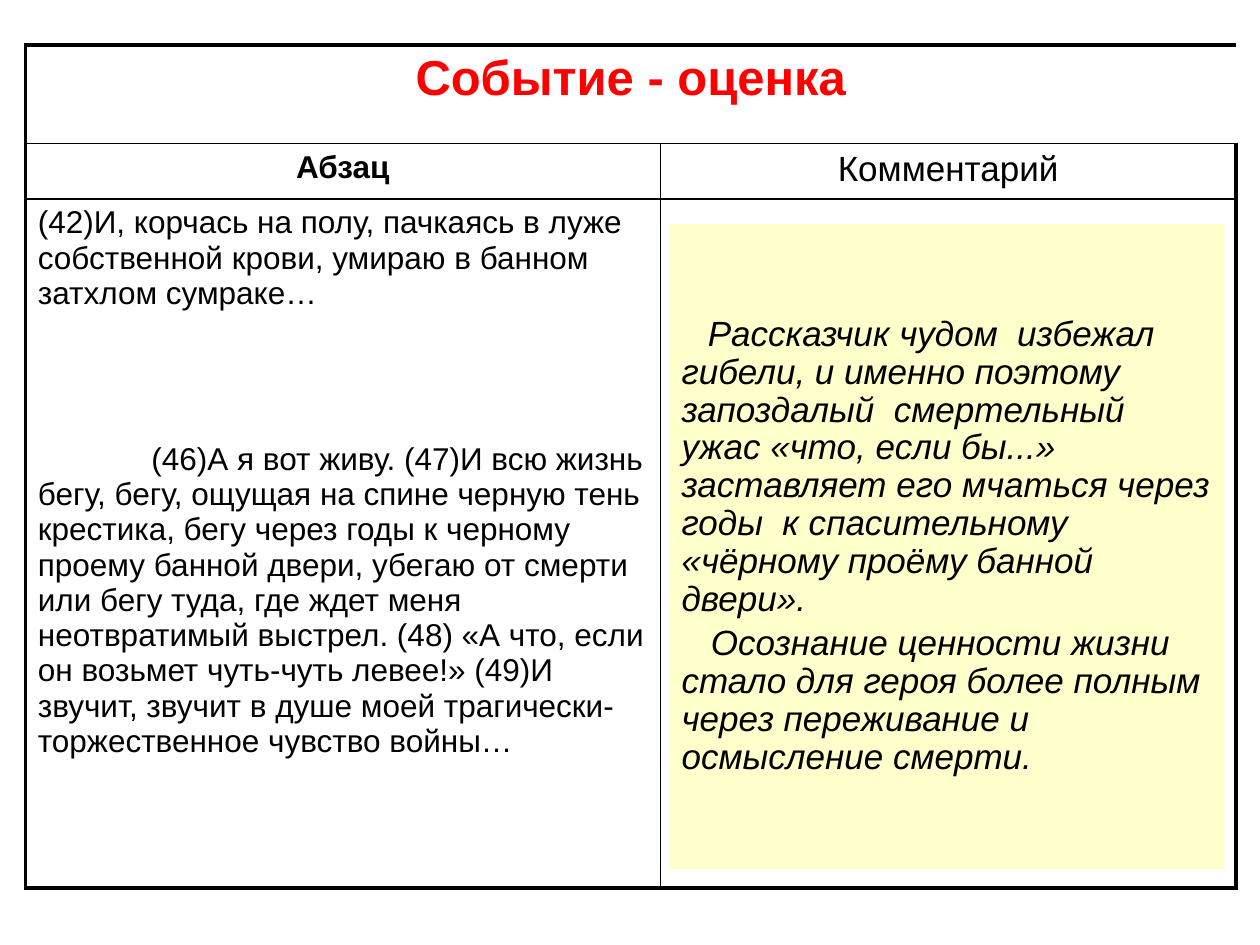
import pptx
import pptx.dml.color
import pptx.enum.shapes
import pptx.enum.text
import pptx.oxml
import pptx.oxml.ns
import pptx.util
from pptx.util import Cm

ALIGN = pptx.enum.text.PP_ALIGN


def color(hex_string):
    return pptx.dml.color.RGBColor.from_string(hex_string)


def add_text(paragraph, text, size, bold=False, italic=False, hex_string="000000"):
    run = paragraph.add_run()
    run.text = text
    run.font.name = "Arial"
    run.font.size = pptx.util.Pt(size)
    run.font.bold = bold
    run.font.italic = italic
    run.font.color.rgb = color(hex_string)


presentation = pptx.Presentation()
presentation.slide_width = Cm(25.4)
presentation.slide_height = Cm(19.05)
slide = presentation.slides.add_slide(presentation.slide_layouts[6])

# Table grid
column_widths = [12.8, 11.61]
row_heights = [1.98, 1.12, 13.89]
table = slide.shapes.add_table(
    3, 2, Cm(0.51), Cm(0.91), Cm(sum(column_widths)), Cm(sum(row_heights))
).table
table.first_row = False
table.horz_banding = False
for column, width in zip(table.columns, column_widths):
    column.width = Cm(width)
for row, height in zip(table.rows, row_heights):
    row.height = Cm(height)
table.cell(0, 0).merge(table.cell(0, 1))

# Cell borders: thick around the table, thin inside
for row_index in range(3):
    for column_index in range(2):
        cell = table.cell(row_index, column_index)
        cell.fill.background()
        outer_edges = {
            "lnL": column_index == 0,
            "lnR": column_index == 1,
            "lnT": row_index == 0,
            "lnB": row_index == 2,
        }
        properties = cell._tc.get_or_add_tcPr()
        for position, (tag, is_outer) in enumerate(outer_edges.items()):
            if row_index == 0 and (column_index, tag) in [(0, "lnR"), (1, "lnL")]:
                line_fill = "<a:noFill/>"
            else:
                line_fill = '<a:solidFill><a:srgbClr val="000000"/></a:solidFill>'
            line_width = pptx.util.Pt(2.25 if is_outer else 1)
            border = pptx.oxml.parse_xml(
                f'<a:{tag} {pptx.oxml.ns.nsdecls("a")} w="{int(line_width)}">'
                f"{line_fill}</a:{tag}>"
            )
            properties.insert(position, border)

# Title and column headings
headings = [
    (0, 0, "Событие - оценка", 28, True, "FF0000"),
    (1, 0, "Абзац", 18, True, "000000"),
    (1, 1, "Комментарий", 20, False, "000000"),
]
for row_index, column_index, text, size, bold, hex_string in headings:
    paragraph = table.cell(row_index, column_index).text_frame.paragraphs[0]
    paragraph.alignment = ALIGN.CENTER
    add_text(paragraph, text, size, bold, hex_string=hex_string)

# Quoted passages
quote_frame = table.cell(2, 0).text_frame
paragraph = quote_frame.paragraphs[0]
add_text(
    paragraph,
    "(42)И, корчась на полу, пачкаясь в луже собственной крови, "
    "умираю в банном затхлом сумраке…",
    18,
)
paragraph = quote_frame.add_paragraph()
paragraph.space_before = pptx.util.Pt(74.7)
paragraph._p.get_or_add_pPr().set("indent", str(int(Cm(2.29))))
add_text(
    paragraph,
    "(46)А я вот живу. (47)И всю жизнь бегу, бегу, ощущая на спине черную тень "
    "крестика, бегу через годы к черному проему банной двери, убегаю от смерти "
    "или бегу туда, где ждет меня неотвратимый выстрел. (48) «А что, если он "
    "возьмет чуть-чуть левее!» (49)И звучит, звучит в душе моей "
    "трагически-торжественное чувство войны…",
    18,
)

# Comment panel
panel = slide.shapes.add_shape(
    pptx.enum.shapes.MSO_SHAPE.RECTANGLE, Cm(13.49), Cm(4.52), Cm(11.2), Cm(13)
)
panel.shadow.inherit = False
panel.fill.solid()
panel.fill.fore_color.rgb = color("FFFFCC")
panel.line.fill.background()
panel_frame = panel.text_frame
panel_frame.word_wrap = True
panel_frame.vertical_anchor = pptx.enum.text.MSO_ANCHOR.MIDDLE
comments = [
    (
        0.53,
        "Рассказчик чудом  избежал гибели, и именно поэтому запоздалый  "
        "смертельный ужас «что, если бы...» заставляет его мчаться через годы  "
        "к спасительному «чёрному проёму банной двери».",
    ),
    (
        0.59,
        "Осознание ценности жизни стало для героя более полным через "
        "переживание и осмысление смерти.",
    ),
]
for index, (indent, text) in enumerate(comments):
    paragraph = panel_frame.add_paragraph() if index else panel_frame.paragraphs[0]
    paragraph.alignment = ALIGN.LEFT
    paragraph.line_spacing = 0.9
    paragraph.space_before = pptx.util.Pt(4)
    paragraph._p.get_or_add_pPr().set("indent", str(int(Cm(indent))))
    add_text(paragraph, text, 20, italic=True)

presentation.save("out.pptx")
